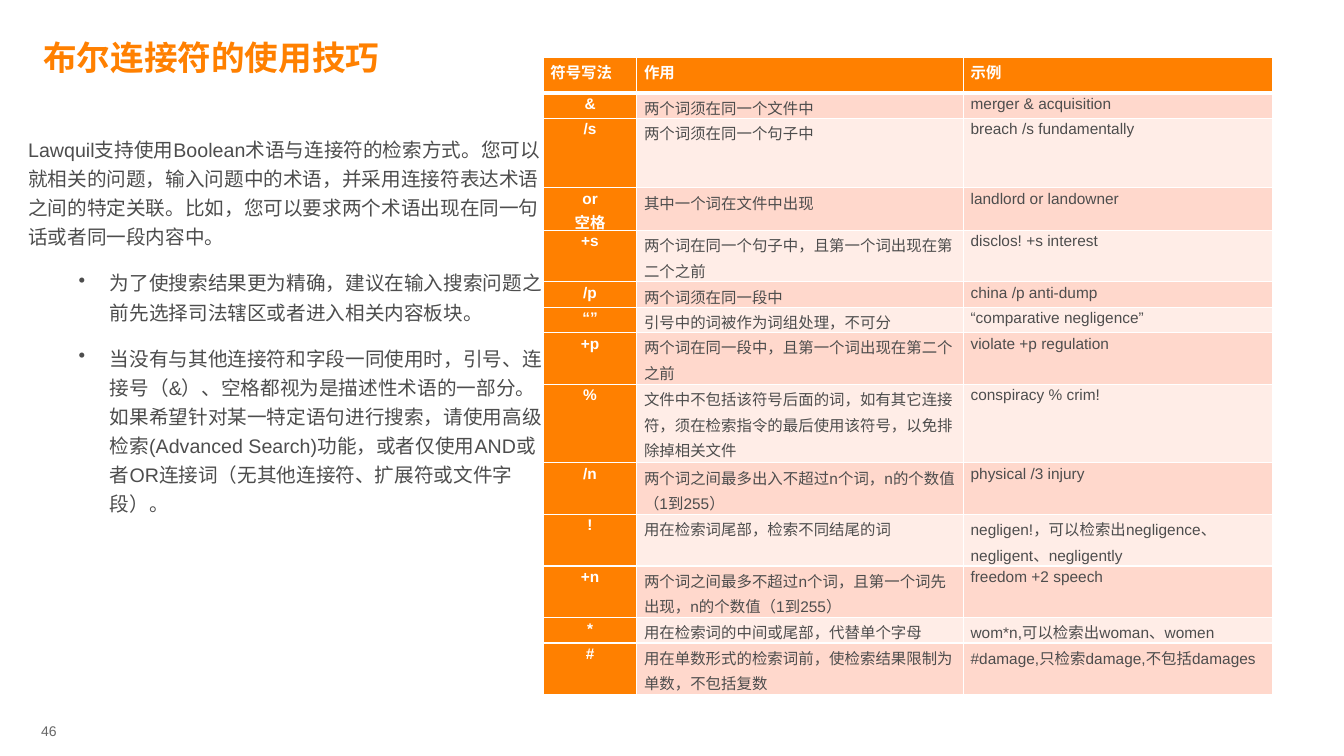
"""Build the slide on Boolean connectors: title, explanation and symbol table."""
from dataclasses import dataclass

from lxml.etree import SubElement
from pptx import Presentation
from pptx.dml.color import RGBColor as Color
from pptx.enum.text import MSO_ANCHOR as Anchor, PP_ALIGN as Align
from pptx.oxml.ns import qn
from pptx.util import Cm, Pt

TITLE = "布尔连接符的使用技巧"
PAGE_NUMBER = "46"
INTRO = (
    "Lawquil支持使用Boolean术语与连接符的检索方式。您可以就相关的问题，输入问题中的术语，"
    "并采用连接符表达术语之间的特定关联。比如，您可以要求两个术语出现在同一句话或者同一段内容中。"
)
TIPS = [
    "为了使搜索结果更为精确，建议在输入搜索问题之前先选择司法辖区或者进入相关内容板块。",
    "当没有与其他连接符和字段一同使用时，引号、连接号（&）、空格都视为是描述性术语的一部分。"
    "如果希望针对某一特定语句进行搜索，请使用高级检索(Advanced Search)功能，"
    "或者仅使用AND或者OR连接词（无其他连接符、扩展符或文件字段）。",
]
HEADER = ("符号写法", "作用", "示例")
CONNECTORS = [
    ("&", "两个词须在同一个文件中", "merger & acquisition"),
    ("/s", "两个词须在同一个句子中", "breach /s fundamentally"),
    ("or\n空格", "其中一个词在文件中出现", "landlord or landowner"),
    ("+s", "两个词在同一个句子中，且第一个词出现在第二个之前", "disclos! +s interest"),
    ("/p", "两个词须在同一段中", "china /p anti-dump"),
    ("“”", "引号中的词被作为词组处理，不可分", "“comparative negligence”"),
    ("+p", "两个词在同一段中，且第一个词出现在第二个之前", "violate +p regulation"),
    ("%", "文件中不包括该符号后面的词，如有其它连接符，须在检索指令的最后使用该符号，以免排除掉相关文件",
     "conspiracy % crim!"),
    ("/n", "两个词之间最多出入不超过n个词，n的个数值（1到255）", "physical /3 injury"),
    ("!", "用在检索词尾部，检索不同结尾的词", "negligen!，可以检索出negligence、negligent、negligently"),
    ("+n", "两个词之间最多不超过n个词，且第一个词先出现，n的个数值（1到255）", "freedom +2 speech"),
    ("*", "用在检索词的中间或尾部，代替单个字母", "wom*n,可以检索出woman、women"),
    ("#", "用在单数形式的检索词前，使检索结果限制为单数，不包括复数", "#damage,只检索damage,不包括damages"),
]
COLUMN_WIDTHS = (2.36, 8.23, 7.8)
ROW_HEIGHTS = (0.89, 0.64, 1.75, 0.71, 1.3, 0.64, 0.64, 1.3, 1.98, 1.3, 1.3, 1.3, 0.64, 1.3)


@dataclass(frozen=True)
class Theme:
    """Colours, fonts and type sizes of the slide."""
    orange: str = "FF8000"
    white: str = "FFFFFF"
    text: str = "4D4D4D"
    muted: str = "666666"
    bands: tuple = ("FFD8CC", "FFEDE7")
    latin: str = "Arial"
    chinese: str = "Noto Sans CJK SC"
    title_size: int = 24
    body_size: int = 14
    table_size: int = 11
    number_size: int = 10


THEME = Theme()


def set_font(para, size, color, bold=False, name=THEME.latin):
    """Set the Latin and East Asian fonts of a paragraph."""
    font = para.font
    font.size, font.bold, font.name = Pt(size), bold, name
    font.color.rgb = Color.from_string(color)
    SubElement(para._p.pPr.find(qn("a:defRPr")), qn("a:ea"), typeface=THEME.chinese)


def set_frame(frame, anchor=Anchor.TOP):
    """Remove the margins of a text frame and let it wrap."""
    frame.margin_left = frame.margin_right = frame.margin_top = frame.margin_bottom = 0
    frame.word_wrap, frame.vertical_anchor = True, anchor


def add_text(page, left, top, width, height):
    """Add a text box without margins and return its frame."""
    frame = page.shapes.add_textbox(Cm(left), Cm(top), Cm(width), Cm(height)).text_frame
    set_frame(frame)
    return frame


def set_borders(cell, bottom):
    """Draw white borders round a cell."""
    for side, points in (("L", 1), ("R", 1), ("T", 1), ("B", bottom)):
        line = SubElement(cell._tc.get_or_add_tcPr(), qn(f"a:ln{side}"), w=str(Pt(points)))
        SubElement(SubElement(line, qn("a:solidFill")), qn("a:srgbClr"), val=THEME.white)


def fill_cell(cell, text, row, column):
    """Write and format one cell according to its place in the table."""
    accent = row == 0 or column == 0
    set_borders(cell, 3 if row == 0 else 1)
    cell.fill.solid()
    cell.fill.fore_color.rgb = Color.from_string(THEME.orange if accent else THEME.bands[(row - 1) % 2])
    cell.margin_left = cell.margin_right = Cm(0.18)
    cell.margin_top = cell.margin_bottom = 0
    cell.text = text
    for para in cell.text_frame.paragraphs:
        para.line_spacing = 1.15
        para.alignment = Align.CENTER if row and column == 0 else Align.LEFT
        set_font(para, THEME.table_size, THEME.white if accent else THEME.text, accent)


def add_connector_table(page):
    """Add the table of connectors."""
    rows = [HEADER, *CONNECTORS]
    table = page.shapes.add_table(len(rows), len(HEADER), Cm(13.69), Cm(1.45),
                                  Cm(sum(COLUMN_WIDTHS)), Cm(sum(ROW_HEIGHTS))).table
    for column, width in zip(table.columns, COLUMN_WIDTHS):
        column.width = Cm(width)
    for row, height in zip(table.rows, ROW_HEIGHTS):
        row.height = Cm(height)
    for row, texts in enumerate(rows):
        for column, text in enumerate(texts):
            fill_cell(table.cell(row, column), text, row, column)


def add_explanation(page):
    """Add the introduction and the bulleted tips."""
    frame = add_text(page, 0.71, 3.33, 12.98, 14.02)
    frame.text = "\n".join([INTRO, *TIPS])
    for index, para in enumerate(frame.paragraphs):
        para.line_spacing, para.space_after = 1.24, Pt(6)
        if index:
            para.level, para.space_before = 1, Pt(6)
            props = para._p.get_or_add_pPr()
            props.set("marL", str(Cm(2.06)))
            props.set("indent", str(Cm(-0.79)))
            SubElement(props, qn("a:buChar"), char="•")
        set_font(para, THEME.body_size, THEME.text)


def add_title(page):
    """Place and format the title."""
    title = page.shapes.title
    title.left, title.top, title.width, title.height = Cm(1.09), Cm(0.91), Cm(28.52), Cm(1.07)
    title.text = TITLE
    set_frame(title.text_frame, Anchor.MIDDLE)
    para = title.text_frame.paragraphs[0]
    para.alignment = Align.LEFT
    set_font(para, THEME.title_size, THEME.orange, True, THEME.chinese)


def add_page_number(page):
    """Add the page number."""
    frame = add_text(page, 1.04, 18.21, 1.07, 0.84)
    frame.text = PAGE_NUMBER
    set_font(frame.paragraphs[0], THEME.number_size, THEME.muted)


def main():
    """Build and save the deck."""
    deck = Presentation()
    deck.slide_width, deck.slide_height = Cm(33.87), Cm(19.05)
    page = deck.slides.add_slide(deck.slide_layouts[5])
    add_title(page)
    add_page_number(page)
    add_connector_table(page)
    add_explanation(page)
    deck.save("out.pptx")


if __name__ == "__main__":
    main()
